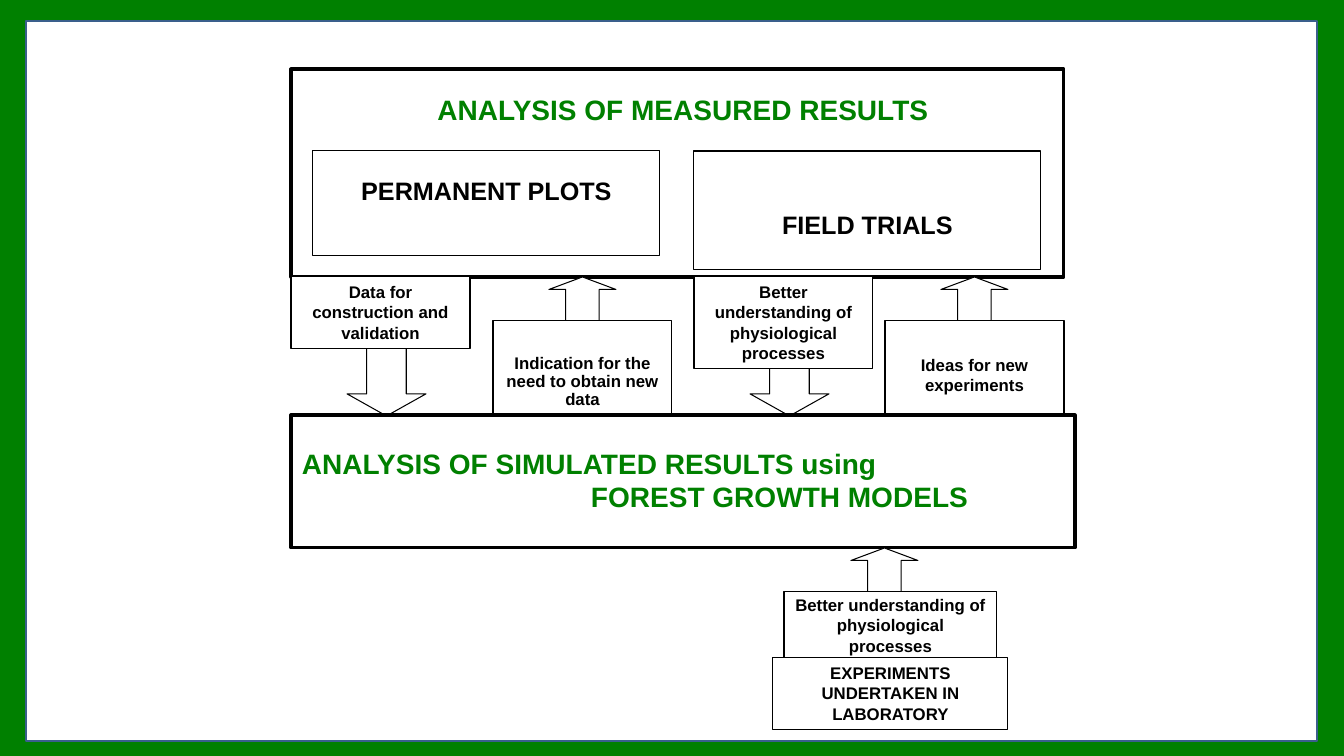
from dataclasses import dataclass

from pptx import Presentation
from pptx.dml.color import RGBColor
from pptx.enum.shapes import MSO_SHAPE
from pptx.enum.text import MSO_ANCHOR, PP_ALIGN
from pptx.util import Emu, Pt

RECT, UP, DOWN = MSO_SHAPE.RECTANGLE, MSO_SHAPE.UP_ARROW, MSO_SHAPE.DOWN_ARROW
CENTER, LEFT = PP_ALIGN.CENTER, PP_ALIGN.LEFT
TOP = MSO_ANCHOR.TOP
SLIDE_WIDTH, SLIDE_HEIGHT = 1344, 756
EMU_PER_PX = 12192000 / SLIDE_WIDTH


@dataclass(frozen=True)
class Theme:
    """Colours, font, type sizes and line widths of the slide."""
    green: str = "008000"
    blue: str = "3A5F8C"
    white: str = "FFFFFF"
    black: str = "000000"
    font: str = "Arial"
    heading: int = 20
    source: int = 18
    note: int = 12
    thin: float = 0.75
    thick: float = 2.25
    frame: float = 2


THEME = Theme()


def px(length):
    """Turn a length in px into EMU."""
    return Emu(round(length * EMU_PER_PX))


def add_outline(slide, kind, box, fill=THEME.white, line=THEME.black, weight=THEME.thin):
    """Draw a preset shape in the box."""
    outline = slide.shapes.add_shape(kind, *map(px, box))
    outline.shadow.inherit = False
    outline.fill.solid()
    outline.fill.fore_color.rgb = RGBColor.from_string(fill)
    outline.line.color.rgb = RGBColor.from_string(line)
    outline.line.width = Pt(weight)
    return outline


def write_text(holder, lines, size=THEME.note, color=THEME.black, align=CENTER,
               spacing=1.0, top=5, indents=(0,)):
    """Write bold lines into a shape or text box, one paragraph each."""
    frame = holder.text_frame
    frame.word_wrap = True
    frame.vertical_anchor = TOP
    frame.margin_left = frame.margin_right = px(10)
    frame.margin_top, frame.margin_bottom = px(top), px(5)
    for index, (line, indent) in enumerate(zip(lines, indents)):
        paragraph = frame.paragraphs[0] if index == 0 else frame.add_paragraph()
        paragraph.alignment = align
        paragraph.line_spacing = spacing
        if indent:
            paragraph._p.get_or_add_pPr().set("marL", str(px(indent)))
        run = paragraph.add_run()
        run.text = line
        run.font.name = THEME.font
        run.font.size = Pt(size)
        run.font.bold = True
        run.font.color.rgb = RGBColor.from_string(color)


def add_heading(slide, box, lines, **text_format):
    """Place a green heading in a text box."""
    heading = slide.shapes.add_textbox(*map(px, box))
    write_text(heading, lines, size=THEME.heading, color=THEME.green, **text_format)


def add_note(slide, box, text, **text_format):
    """Draw a thin-lined box with its text."""
    write_text(add_outline(slide, RECT, box), [text], **text_format)


def add_block_arrow(slide, kind, box, head):
    """Draw a block arrow with the given head proportion."""
    arrow = add_outline(slide, kind, box)
    arrow.adjustments[0] = 0.5
    arrow.adjustments[1] = head


def draw_border(slide, box):
    """Draw the green border with the white page inside the box."""
    left, top, width, height = box
    add_outline(slide, RECT, box, fill=THEME.green, line=THEME.green, weight=THEME.frame)
    page = (left + 26, top + 21, width - 53, height - 36)
    add_outline(slide, RECT, page, line=THEME.blue, weight=THEME.frame)


def draw_measured_results(slide, box):
    """Draw the panel of measured results with its two sources."""
    left, top, width, _ = box
    add_outline(slide, RECT, box, weight=THEME.thick)
    add_heading(slide, (left, top + 19, width + 11, 43), ["ANALYSIS OF MEASURED RESULTS"])
    sources = (("PERMANENT PLOTS", 22, 105, 24), ("FIELD TRIALS", 403, 119, 58))
    for name, offset, height, inset in sources:
        add_note(slide, (left + offset, top + 82, 347, height), name,
                 size=THEME.source, top=inset)


def draw_exchange(slide, box):
    """Draw the flows between measured and simulated results."""
    left, top, _, height = box
    note_width, arrow_offset = 179, 56
    downward = (("Data for construction and validation", 0, 72),
                ("Better understanding of physiological processes", 403, 92))
    upward = (("Indication for the need to obtain new data", 202, 0.9),
              ("Ideas for new experiments", 594, 1.0))
    for text, offset, note_height in downward:
        x = left + offset
        add_block_arrow(slide, DOWN, (x + arrow_offset, top + height - 88, 79, 88), 0.28)
        add_note(slide, (x, top, note_width, note_height), text)
    for text, offset, spacing in upward:
        x = left + offset
        add_block_arrow(slide, UP, (x + arrow_offset, top, 67, 50), 0.25)
        add_note(slide, (x, top + 44, note_width, height - 44), text,
                 spacing=spacing, top=34)


def draw_simulated_results(slide, box):
    """Draw the panel of simulated results."""
    left, top, width, _ = box
    add_outline(slide, RECT, box, weight=THEME.thick)
    add_heading(slide, (left + 1, top + 26, width, 78),
                ["ANALYSIS OF SIMULATED RESULTS using", "FOREST GROWTH MODELS"],
                align=LEFT, indents=(0, 289))


def draw_laboratory(slide, box):
    """Draw the laboratory experiments feeding the models above."""
    left, top, width, height = box
    add_block_arrow(slide, UP, (left + 78, top, 67, 50), 0.25)
    add_note(slide, (left + 11, top + 44, width - 22, 72),
             "Better understanding of physiological processes", top=3)
    add_note(slide, (left, top + height - 72, width, 72),
             "EXPERIMENTS UNDERTAKEN IN LABORATORY")


def main():
    """Build the slide and save it."""
    deck = Presentation()
    deck.slide_width, deck.slide_height = px(SLIDE_WIDTH), px(SLIDE_HEIGHT)
    slide = deck.slides.add_slide(deck.slide_layouts[6])
    draw_border(slide, (0, 0, SLIDE_WIDTH, SLIDE_HEIGHT))
    draw_measured_results(slide, (291, 69, 773, 208))
    draw_exchange(slide, (291, 277, 773, 139))
    draw_simulated_results(slide, (291, 415, 784, 133))
    draw_laboratory(slide, (773, 548, 235, 182))
    deck.save("out.pptx")


if __name__ == "__main__":
    main()
